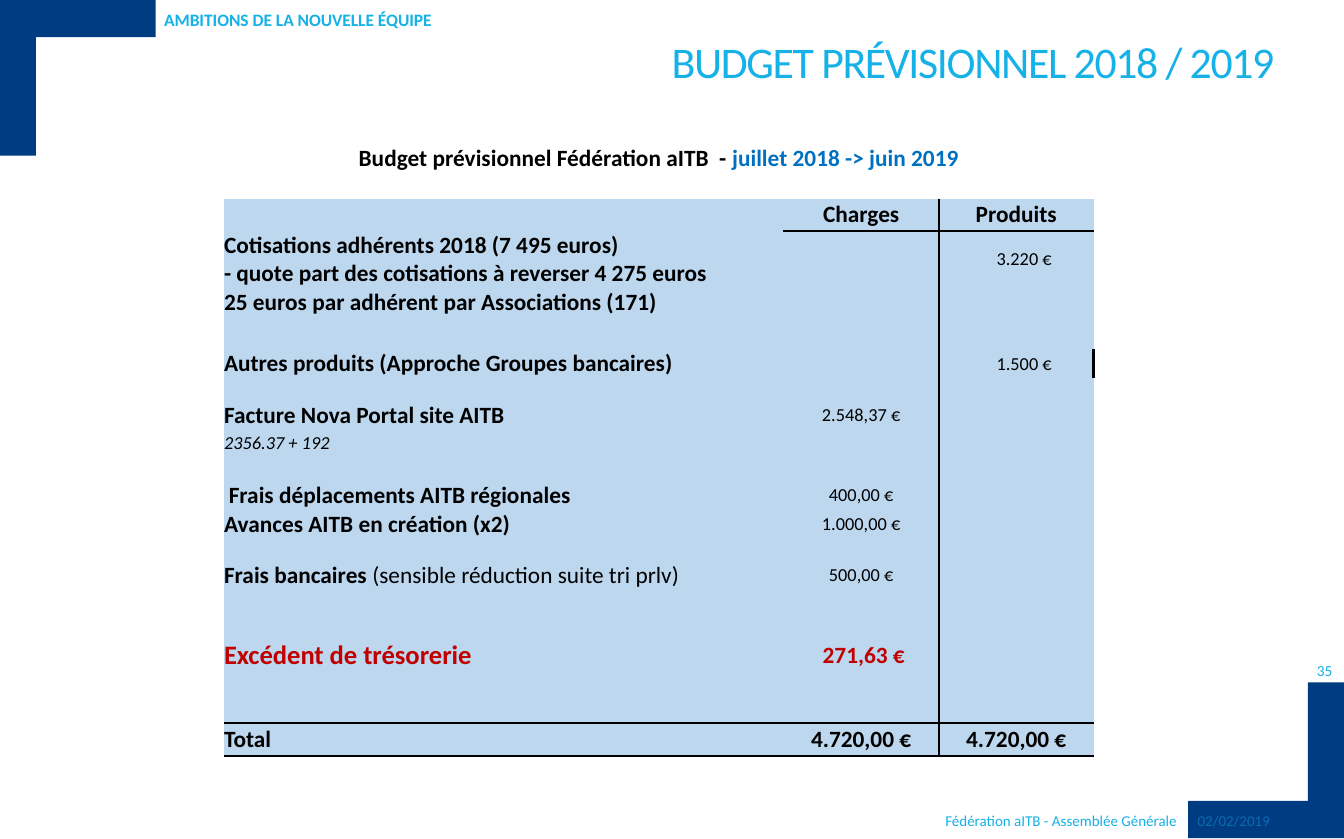
"""Build the 2018 / 2019 provisional budget slide."""
from lxml.etree import SubElement
from pptx import Presentation
from pptx.dml.color import RGBColor
from pptx.enum.shapes import MSO_SHAPE
from pptx.enum.text import MSO_ANCHOR, PP_ALIGN
from pptx.oxml.ns import qn
from pptx.util import Cm, Inches, Pt

NAVY = RGBColor(0x00, 0x3C, 0x82)
CYAN = RGBColor(0x16, 0xB1, 0xE6)
DATE_BLUE = RGBColor(0x0A, 0x6C, 0xAF)
PERIOD_BLUE = RGBColor(0x00, 0x70, 0xC0)
PALE_BLUE = RGBColor(0xBD, 0xD7, 0xEE)
RED = RGBColor(0xC0, 0x00, 0x00)
BLACK = RGBColor(0x00, 0x00, 0x00)
PLAIN_STYLE = "{2D5ABB26-0587-4C30-8999-92F81FD0307C}"
RIGHT, CENTER, LEFT = PP_ALIGN.RIGHT, PP_ALIGN.CENTER, PP_ALIGN.LEFT
TOP, MIDDLE = MSO_ANCHOR.TOP, MSO_ANCHOR.MIDDLE


def write(frame, text, size=14, color=BLACK, bold=False, italic=False,
          align=LEFT, line_spacing=None, tracking=None):
    """Append text to the last paragraph; each line break starts a new one."""
    for number, line in enumerate(text.split("\n")):
        paragraph = frame.add_paragraph() if number else frame.paragraphs[-1]
        paragraph.alignment = align
        if line_spacing:
            paragraph.line_spacing = Pt(line_spacing)
        run = paragraph.add_run()
        run.text = line
        run.font.name = "Calibri"
        run.font.size = Pt(size)
        run.font.bold = bold
        run.font.italic = italic
        run.font.color.rgb = color
        if tracking:
            run.font._element.set("spc", str(round(tracking * 100)))


def draw_border(cell, side):
    """Draw a black line on one side of a cell."""
    line = SubElement(cell._tc.get_or_add_tcPr(), qn(f"a:ln{side}"), w=str(Pt(1.5)))
    SubElement(SubElement(line, qn("a:solidFill")), qn("a:srgbClr"), val=str(BLACK))


deck = Presentation()
deck.slide_width, deck.slide_height = Cm(28.5), Cm(17.8)
slide = deck.slides.add_slide(deck.slide_layouts[6])

CORNER_BARS = [(9.92, 6.69, 1.3, 0.31), (10.92, 5.7, 0.3, 1.3),
               (0, 0, 1.3, 0.31), (0, 0, 0.3, 1.3)]
for place in CORNER_BARS:
    bar = slide.shapes.add_shape(MSO_SHAPE.RECTANGLE, *map(Inches, place))
    bar.shadow.inherit = False
    bar.fill.solid()
    bar.fill.fore_color.rgb = NAVY
    bar.line.fill.background()

LABELS = [
    ("BUDGET PRÉVISIONNEL 2018 / 2019", (0.76, 0.35, 9.97, 0.84),
     (0.2, 0.05, 0.09, 0), TOP,
     dict(size=26.3, color=CYAN, align=RIGHT, line_spacing=24, tracking=-0.8)),
    ("Fédération aITB - Assemblée Générale", (2.3, 6.73, 7.62, 0.23),
     (0.1, 0.05, 0.1, 0.05), TOP, dict(size=9, color=CYAN, align=RIGHT)),
    ("02/02/2019", (9.9, 6.73, 1.31, 0.23),
     (0.1, 0.05, 0.1, 0.05), TOP, dict(size=9, color=DATE_BLUE)),
    ("AMBITIONS DE LA NOUVELLE ÉQUIPE", (1.37, 0.03, 3.91, 0.26),
     (0, 0.05, 0.1, 0.05), MIDDLE, dict(size=10.5, color=CYAN, bold=True)),
    ("35", (10.91, 5.49, 0.3, 0.22),
     (0, 0, 0, 0), MIDDLE, dict(size=9.2, color=CYAN, align=CENTER)),
]
for text, place, insets, anchor, style in LABELS:
    frame = slide.shapes.add_textbox(*map(Inches, place)).text_frame
    frame.word_wrap = True
    frame.vertical_anchor = anchor
    (frame.margin_left, frame.margin_top,
     frame.margin_right, frame.margin_bottom) = map(Inches, insets)
    write(frame, text, **style)

BOLD = dict(bold=True)
HEADING = dict(bold=True, align=CENTER)
AMOUNT = dict(size=11, align=CENTER)
INCOME = dict(size=11)
BUDGET_ROWS = [
    (0.26, {0: [("Budget prévisionnel Fédération aITB  - ", HEADING),
                ("juillet 2018 -> juin 2019", dict(HEADING, color=PERIOD_BLUE))]}),
    (0.21, {}),
    (0.27, {1: [("Charges", HEADING)], 2: [("Produits", HEADING)]}),
    (0.47, {0: [("Cotisations adhérents 2018 (7 495 euros)\n"
                 "- quote part des cotisations à reverser 4 275 euros", BOLD)],
            2: [("3.220 €", INCOME)]}),
    (0.26, {0: [("25 euros par adhérent par Associations (171)", BOLD)]}),
    (0.26, {}),
    (0.24, {0: [("Autres produits (Approche Groupes bancaires)", BOLD)],
            2: [("1.500 €", INCOME)]}),
    (0.18, {}),
    (0.26, {0: [("Facture Nova Portal site AITB", BOLD)], 1: [("2.548,37 €", AMOUNT)]}),
    (0.21, {0: [("2356.37 + 192", dict(size=11, italic=True))]}),
    (0.21, {}),
    (0.24, {0: [("Frais déplacements AITB régionales", BOLD)], 1: [("400,00 €", AMOUNT)]}),
    (0.24, {0: [("Avances AITB en création (x2)", BOLD)], 1: [("1.000,00 €", AMOUNT)]}),
    (0.18, {}),
    (0.26, {0: [("Frais bancaires ", BOLD), ("(sensible réduction suite tri prlv)", {})],
            1: [("500,00 €", AMOUNT)]}),
    (0.21, {}),
    (0.19, {}),
    (0.27, {0: [("Excédent de trésorerie", dict(size=16, color=RED, bold=True))],
            1: [(" 271,63 €", dict(HEADING, color=RED))]}),
    (0.21, {}),
    (0.22, {}),
    (0.28, {0: [("Total", BOLD)], 1: [("4.720,00 €", HEADING)],
            2: [("4.720,00 €", HEADING)]}),
]
HEADER_ROW, OTHER_INCOME_ROW, TRAVEL_ROW, TOTAL_ROW = 2, 6, 11, len(BUDGET_ROWS) - 1

budget = slide.shapes.add_table(
    len(BUDGET_ROWS), 3, Inches(1.87), Inches(1.19), Inches(7.26), Inches(5.13)).table
budget.first_row = budget.horz_banding = False
budget._tbl.tblPr.find(qn("a:tableStyleId")).text = PLAIN_STYLE
for column, width in zip(budget.columns, (4.67, 1.3, 1.29)):
    column.width = Inches(width)
for row, last_column in ((0, 2), (1, 2), (OTHER_INCOME_ROW, 1)):
    budget.cell(row, 0).merge(budget.cell(row, last_column))

for row, (height, entries) in enumerate(BUDGET_ROWS):
    budget.rows[row].height = Inches(height)
    for column in range(3):
        cell = budget.cell(row, column)
        cell.margin_left = cell.margin_right = cell.margin_top = cell.margin_bottom = 0
        cell.vertical_anchor = MIDDLE
        for text, style in entries.get(column, []):
            write(cell.text_frame, text, **style)
            if style is INCOME:
                cell.margin_left = Inches(0.48)
            elif row == TRAVEL_ROW and column == 0:
                cell.margin_left = Inches(0.04)
        if column not in entries:
            SubElement(cell.text_frame.paragraphs[0]._p, qn("a:endParaRPr"), sz="1000")
        if row < HEADER_ROW:
            cell.fill.background()
            continue
        sides = {
            "L": column == 2,
            "R": column == (0 if row == OTHER_INCOME_ROW else 1),
            "T": row == TOTAL_ROW,
            "B": row >= TOTAL_ROW - 1 or (row == HEADER_ROW and column > 0),
        }
        for side, drawn in sides.items():
            if drawn:
                draw_border(cell, side)
        cell.fill.solid()
        cell.fill.fore_color.rgb = PALE_BLUE

deck.save("out.pptx")
